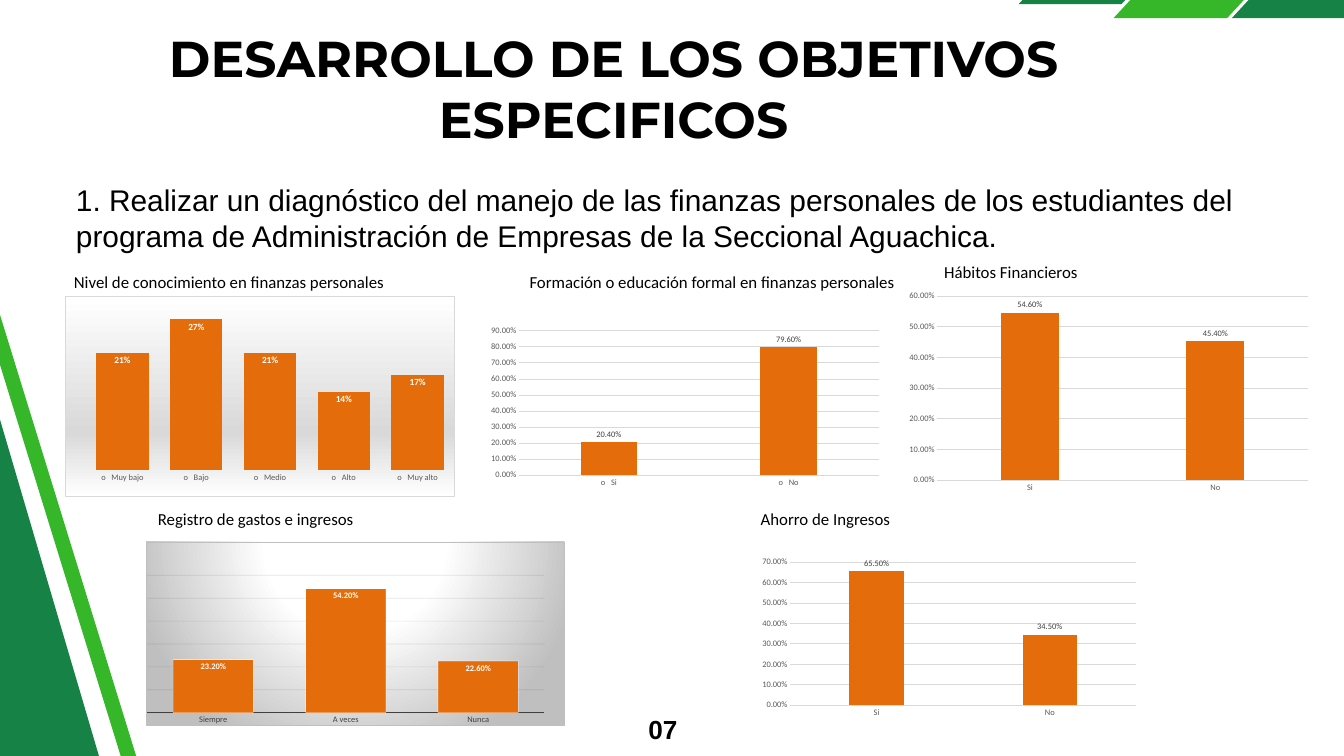
import pptx
import pptx.util
import pptx.oxml
import pptx.oxml.ns
import pptx.dml.color
import pptx.chart.data
import pptx.enum.chart
import pptx.enum.text

Inches = pptx.util.Inches
Pt = pptx.util.Pt
qn = pptx.oxml.ns.qn
XL = pptx.enum.chart
ALIGN = pptx.enum.text.PP_ALIGN
NS = pptx.oxml.ns.nsdecls("a", "c")

GREEN, LIME, ORANGE = "168246", "35B729", "E46C0A"
BLACK, WHITE, GRAY, DARK, RULE = "000000", "FFFFFF", "595959", "404040", "D9D9D9"

BANDS = [
    (GREEN, [(16.01, -0.86), (17.53, -0.86), (16.69, 0.06), (15.16, 0.06)]),
    (LIME, [(17.8, -1.06), (19.49, -1.06), (18.26, 0.27), (16.57, 0.27)]),
    (GREEN, [(19.56, -1.06), (21.25, -1.06), (20.02, 0.27), (18.33, 0.27)]),
    (GREEN, [(-1.97, 17.32), (-6.6, 1.57), (-1.79, 0.16), (2.84, 15.9)]),
    (LIME, [(3.44, 16.58), (-1.4, 0.89), (-1.19, 0.83), (3.65, 16.51)]),
]

LINEAR = ([(0, WHITE), (68, RULE), (100, WHITE)], '<a:lin ang="5400000" scaled="0"/>')
RADIAL = (
    [(0, WHITE), (39, WHITE), (100, "BFBFBF")],
    '<a:path path="circle"><a:fillToRect l="50000" t="-80000" r="50000" b="180000"/></a:path>',
)

PLAIN = dict(gap=219, overlap=-27, fmt="0.00%", axis=(RULE, 0.75), cat_color=GRAY,
             grid=RULE, values=True, label=dict(size=Pt(9), bold=False), label_color=DARK)
LEVEL = dict(PLAIN, gap=41, overlap=0, fmt="0%", axis=None, grid=None, values=False,
             label=dict(size=Pt(10), bold=True), label_color=WHITE,
             back=LINEAR, border=RULE)
RECORD = dict(PLAIN, gap=65, overlap=0, axis=(DARK, 1.5), cat_color=DARK, grid="0D0D0D",
              grid_alpha=10, values=False, label=dict(size=Pt(9), bold=True),
              label_color=WHITE, back=RADIAL, border="BFBFBF", edge=WHITE)

CHARTS = [
    ("Nivel de conocimiento en finanzas personales", (1.1, 4.05), (0.96, 4.41, 5.81, 2.98),
     ["o   Muy bajo", "o   Bajo", "o   Medio", "o   Alto", "o   Muy alto"],
     [0.21, 0.27, 0.21, 0.14, 0.17], 0.3, (0.053, 0.028, 0.947, 0.841), LEVEL),
    ("Formación o educación formal en finanzas personales", (7.88, 4.05), (6.8, 4.41, 6.28, 2.98),
     ["o   Si", "o   No"], [0.204, 0.796], 0.9, (0.147, 0.172, 0.853, 0.721), PLAIN),
    ("Hábitos Financieros", (14.05, 3.9), (13.41, 4.27, 6.18, 3.12),
     ["Si", "No"], [0.546, 0.454], 0.6, None, PLAIN),
    ("Registro de gastos e ingresos", (2.35, 7.57), (2.17, 8.06, 6.23, 2.74),
     ["Siempre", "A veces", "Nunca"], [0.232, 0.542, 0.226], 0.6,
     (0.002, 0.182, 0.951, 0.749), RECORD),
    ("Ahorro de Ingresos", (11.32, 7.57), (11.24, 8.01, 5.81, 2.74),
     ["Si", "No"], [0.655, 0.345], 0.7, (0.089, 0.13, 0.887, 0.776), PLAIN),
]


def rgb(value):
    return pptx.dml.color.RGBColor.from_string(value)


def put(obj, **values):
    for name, value in values.items():
        setattr(obj, name, value)


def set_font(font, color, **values):
    put(font, **values)
    font.color.rgb = rgb(color)


def set_line(line, color, width=0.75, alpha=None):
    line.width = Pt(width)
    line.color.rgb = rgb(color)
    if alpha:
        clr = line.fill._xPr.find(".//" + qn("a:srgbClr"))
        clr.append(pptx.oxml.parse_xml(f'<a:alpha {NS} val="{alpha * 1000}"/>'))


def add_band(s, color, points):
    corners = [(Inches(x), Inches(y)) for x, y in points]
    builder = s.shapes.build_freeform(*corners[0])
    builder.add_line_segments(corners[1:], close=True)
    sp = builder.convert_to_shape()
    sp.shadow.inherit = False
    sp.fill.solid()
    sp.fill.fore_color.rgb = rgb(color)
    sp.line.fill.background()


def write(sp, box, text, size, name, bold=False, align=ALIGN.LEFT, spacing=None):
    put(sp, **dict(zip(("left", "top", "width", "height"), map(Inches, box))))
    tf = sp.text_frame
    put(tf, word_wrap=True, margin_left=0, margin_top=0, margin_right=0, margin_bottom=0,
        vertical_anchor=pptx.enum.text.MSO_ANCHOR.TOP,
        auto_size=pptx.enum.text.MSO_AUTO_SIZE.SHAPE_TO_FIT_TEXT)
    p = tf.paragraphs[0]
    put(p, alignment=align, line_spacing=spacing)
    r = p.add_run()
    r.text = text
    set_font(r.font, BLACK, size=Pt(size), name=name, bold=bold)


def add_text(s, box, *args, **values):
    write(s.shapes.add_textbox(0, 0, 0, 0), box, *args, **values)


def set_background(chart, back=None, border=None):
    fill = line = "<a:noFill/>"
    if back:
        stops = "".join(f'<a:gs pos="{pos * 1000}"><a:srgbClr val="{color}"/></a:gs>'
                        for pos, color in back[0])
        fill = f"<a:gradFill><a:gsLst>{stops}</a:gsLst>{back[1]}</a:gradFill>"
        line = f'<a:solidFill><a:srgbClr val="{border}"/></a:solidFill>'
    xml = f'<c:spPr {NS}>{fill}<a:ln w="9525">{line}</a:ln></c:spPr>'
    chart._chartSpace.find(qn("c:chart")).addnext(pptx.oxml.parse_xml(xml))


def set_plot_area(chart, box):
    area = chart._chartSpace.find(".//" + qn("c:plotArea"))
    for layout in area.findall(qn("c:layout")):
        area.remove(layout)
    modes = '<c:layoutTarget val="inner"/><c:xMode val="edge"/><c:yMode val="edge"/>'
    sides = "".join(f'<c:{tag} val="{value}"/>' for tag, value in zip("xywh", box))
    area.insert(0, pptx.oxml.parse_xml(
        f"<c:layout {NS}><c:manualLayout>{modes}{sides}</c:manualLayout></c:layout>"))


def set_axes(chart, top, style):
    cat, val = chart.category_axis, chart.value_axis
    for axis, color in ((cat, style["cat_color"]), (val, GRAY)):
        put(axis, major_tick_mark=XL.XL_TICK_MARK.NONE, minor_tick_mark=XL.XL_TICK_MARK.NONE)
        set_font(axis.tick_labels.font, color, size=Pt(9), name="Calibri")
        axis.format.line.fill.background()
    if style["axis"]:
        set_line(cat.format.line, *style["axis"])
    put(val, minimum_scale=0, maximum_scale=top, major_unit=0.1,
        visible=style["values"], has_major_gridlines=bool(style["grid"]))
    put(val.tick_labels, number_format=style["fmt"], number_format_is_linked=False)
    if style["grid"]:
        set_line(val.major_gridlines.format.line, style["grid"], alpha=style.get("grid_alpha"))


def add_column_chart(s, box, cats, vals, top, plot_box, style):
    data = pptx.chart.data.CategoryChartData(number_format=style["fmt"])
    data.categories = cats
    data.add_series("Series 1", vals)
    chart = s.shapes.add_chart(XL.XL_CHART_TYPE.COLUMN_CLUSTERED, *map(Inches, box), data).chart
    put(chart, has_title=False, has_legend=False)
    set_font(chart.font, BLACK, size=Pt(10), name="Calibri")
    set_background(chart, style.get("back"), style.get("border"))
    if plot_box:
        set_plot_area(chart, plot_box)
    set_axes(chart, top, style)
    plot = chart.plots[0]
    put(plot, gap_width=style["gap"], overlap=style["overlap"],
        vary_by_categories=False, has_data_labels=True)
    series = plot.series[0]
    series.format.fill.solid()
    series.format.fill.fore_color.rgb = rgb(ORANGE)
    if "edge" in style:
        set_line(series.format.line, style["edge"], alpha=50)
    position = XL.XL_LABEL_POSITION
    put(plot.data_labels, show_value=True, number_format=style["fmt"],
        number_format_is_linked=False,
        position=position.OUTSIDE_END if style["values"] else position.INSIDE_END)
    set_font(plot.data_labels.font, style["label_color"], name="Calibri", **style["label"])


def main():
    prs = pptx.Presentation()
    put(prs, slide_width=Inches(20), slide_height=Inches(11.25))
    s = prs.slides.add_slide(prs.slide_layouts[5])
    for color, points in BANDS:
        add_band(s, color, points)
    write(s.shapes.title, (2.17, 0.41, 13.92, 1.82), "DESARROLLO DE LOS OBJETIVOS ESPECIFICOS",
          54, "Montserrat", bold=True, align=ALIGN.CENTER)
    add_text(s, (9.52, 10.54, 0.56, 0.5), "07", 28, "Arial",
             bold=True, align=ALIGN.RIGHT, spacing=Pt(39.2))
    add_text(s, (1.13, 2.71, 17.33, 1.08),
             "1. Realizar un diagnóstico del manejo de las finanzas personales de los estudiantes "
             "del programa de Administración de Empresas de la Seccional Aguachica.", 32, "Arial")
    for caption, place, *chart in CHARTS:
        add_column_chart(s, *chart)
        add_text(s, (*place, 5.53, 0.3), caption, 18, "Calibri")
    prs.save("out.pptx")


if __name__ == "__main__":
    main()
